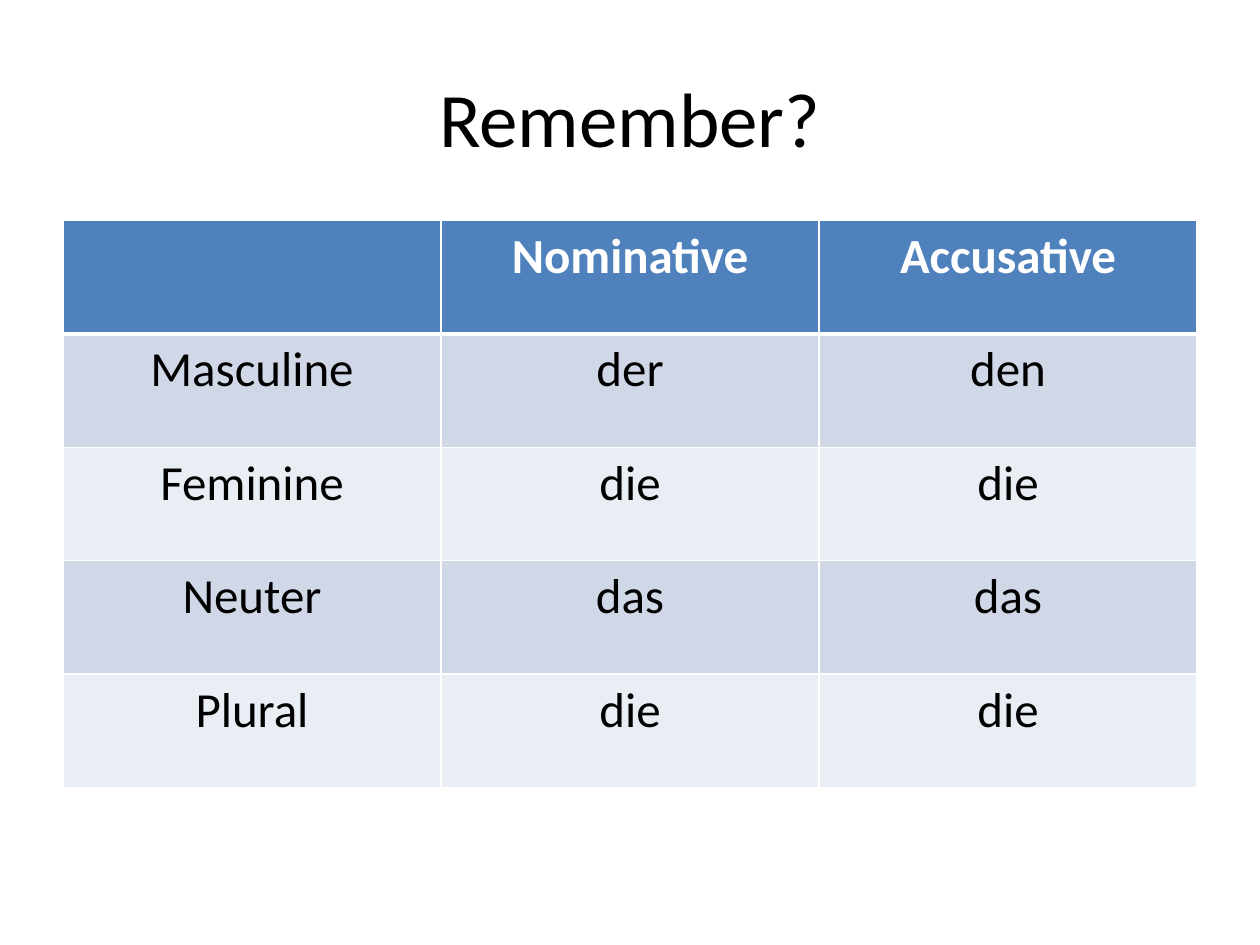
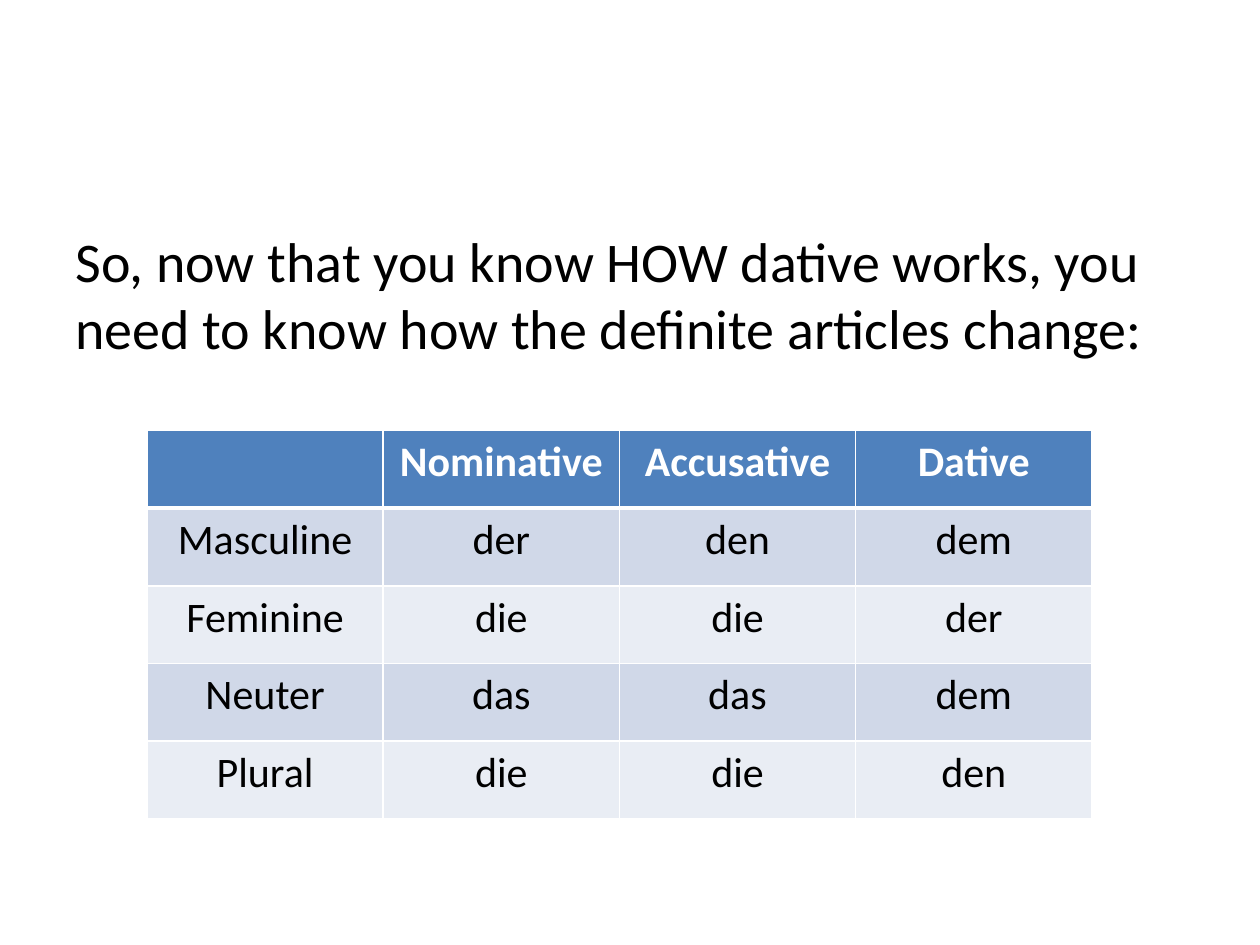
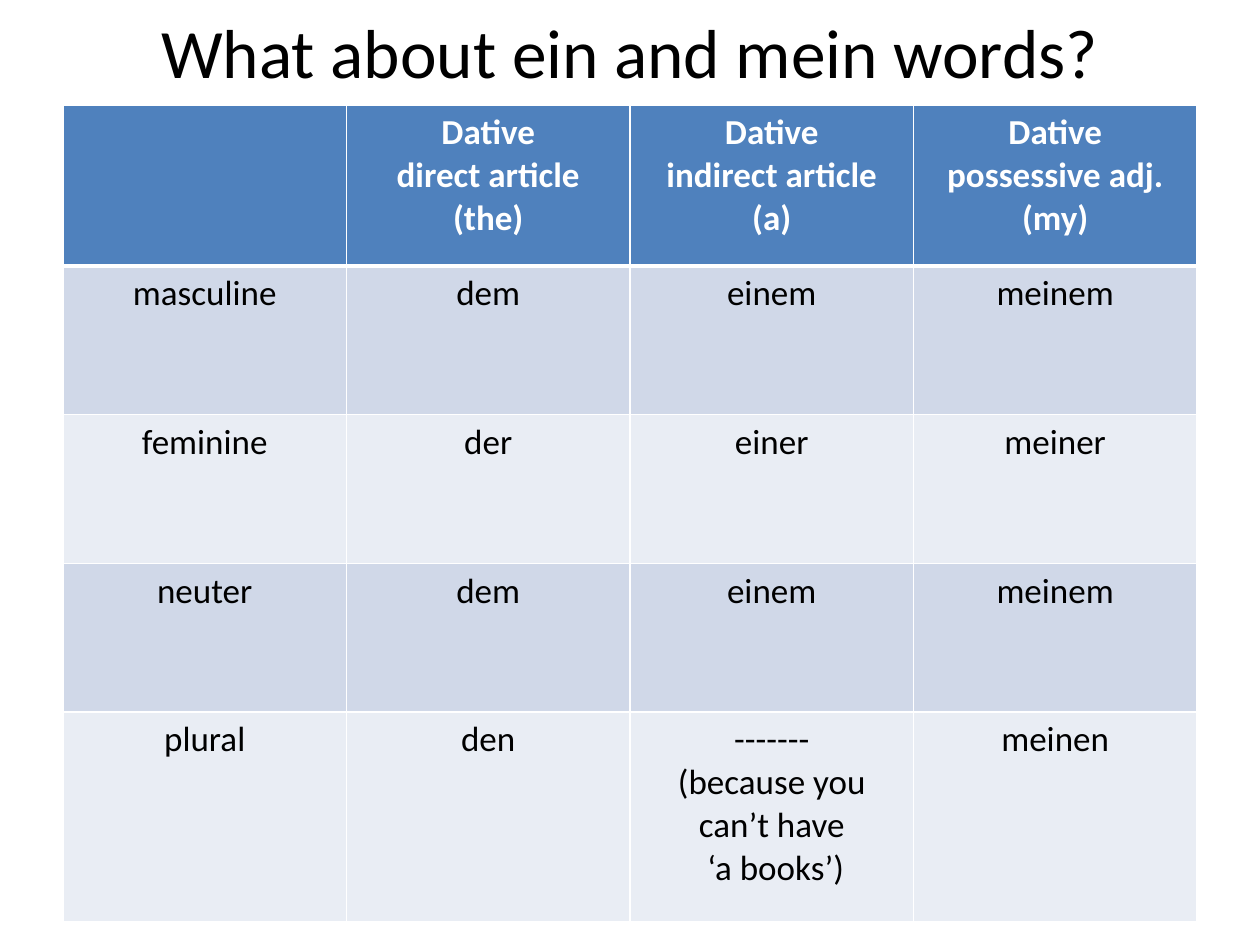
from pptx import Presentation
from pptx.dml.color import RGBColor
from pptx.enum.text import MSO_ANCHOR, PP_ALIGN
from pptx.oxml.xmlchemy import OxmlElement
from pptx.util import Pt

BLACK = RGBColor(0x00, 0x00, 0x00)
WHITE = RGBColor(0xFF, 0xFF, 0xFF)
HEADER_BLUE = RGBColor(0x4F, 0x81, 0xBD)
BAND_DARK = RGBColor(0xD0, 0xD8, 0xE8)
BAND_LIGHT = RGBColor(0xE9, 0xED, 0xF4)
FONT = "Calibri"
MARGIN = 36
CONTENT_WIDTH = 648


class Deck:
    """Hold the lesson style and the slide being built."""

    def __init__(self):
        self.presentation = Presentation()
        self.presentation.slide_width = Pt(720)
        self.presentation.slide_height = Pt(540)
        self.slide = None

    def add_slide(self):
        self.slide = self.presentation.slides.add_slide(self.presentation.slide_layouts[6])

    def style(self, paragraph, size, color=BLACK, bold=False, alignment=PP_ALIGN.CENTER):
        paragraph.alignment = alignment
        font = paragraph.font
        font.name, font.size, font.bold = FONT, Pt(size), bold
        font.color.rgb = color

    def add_text(self, text, top, height, size, anchor, alignment):
        box = self.slide.shapes.add_textbox(Pt(MARGIN), Pt(top), Pt(CONTENT_WIDTH), Pt(height))
        frame = box.text_frame
        frame.word_wrap = True
        frame.vertical_anchor = anchor
        frame.text = text
        self.style(frame.paragraphs[0], size, alignment=alignment)

    def add_title(self, text, height=90, size=44):
        self.add_text(text, 21.6, height, size, MSO_ANCHOR.MIDDLE, PP_ALIGN.CENTER)

    def add_body(self, text):
        self.add_text(text, 126, 356, 32, MSO_ANCHOR.TOP, PP_ALIGN.LEFT)

    def add_borders(self, cell, top, bottom):
        properties = cell._tc.get_or_add_tcPr()
        widths = {"a:lnL": 1, "a:lnR": 1, "a:lnT": top, "a:lnB": bottom}
        for index, (tag, width) in enumerate(widths.items()):
            line = OxmlElement(tag)
            line.set("w", str(Pt(width)))
            fill = OxmlElement("a:solidFill")
            color = OxmlElement("a:srgbClr")
            color.set("val", str(WHITE))
            fill.append(color)
            line.append(fill)
            properties.insert(index, line)

    def add_table(self, rows, top, row_heights, size, left=MARGIN, width=CONTENT_WIDTH):
        column_count = len(rows[0])
        table = self.slide.shapes.add_table(
            len(rows), column_count, Pt(left), Pt(top), Pt(width), Pt(sum(row_heights))
        ).table
        table.horz_banding = False
        for column in table.columns:
            column.width = Pt(width / column_count)
        for row_index, (texts, height) in enumerate(zip(rows, row_heights)):
            table.rows[row_index].height = Pt(height)
            is_header = row_index == 0
            band = BAND_DARK if row_index % 2 else BAND_LIGHT
            for column_index, text in enumerate(texts):
                cell = table.cell(row_index, column_index)
                cell.text = text
                cell.fill.solid()
                cell.fill.fore_color.rgb = HEADER_BLUE if is_header else band
                self.add_borders(cell, 3 if row_index == 1 else 1, 3 if is_header else 1)
                for paragraph in cell.text_frame.paragraphs:
                    self.style(paragraph, size, WHITE if is_header else BLACK, is_header)


def main():
    articles = [
        ("", "Nominative", "Accusative", "Dative"),
        ("Masculine", "der", "den", "dem"),
        ("Feminine", "die", "die", "der"),
        ("Neuter", "das", "das", "dem"),
        ("Plural", "die", "die", "den"),
    ]
    dative_words = [
        ("", "Dative\ndirect article\n(the)", "Dative\nindirect article\n(a)",
         "Dative\npossessive adj.\n(my)"),
        ("masculine", "dem", "einem", "meinem"),
        ("feminine", "der", "einer", "meiner"),
        ("neuter", "dem", "einem", "meinem"),
        ("plural", "den", "-------\n(because you can’t have\n ‘a books’)", "meinen"),
    ]
    deck = Deck()

    deck.add_slide()
    deck.add_title("Remember?")
    deck.add_table([row[:3] for row in articles], 126, [64.8] * 5, 28)

    deck.add_slide()
    deck.add_body("So, now that you know HOW dative works, you need to know "
                  "how the definite articles change:")
    deck.add_table(articles, 246, [44.4] * 5, 24, left=84, width=540)

    deck.add_slide()
    deck.add_title("What about ein and mein words?", height=14.4, size=39.6)
    deck.add_table(dative_words, 60, [92, 85, 85, 85, 120], 20)

    deck.presentation.save("out.pptx")


if __name__ == "__main__":
    main()
